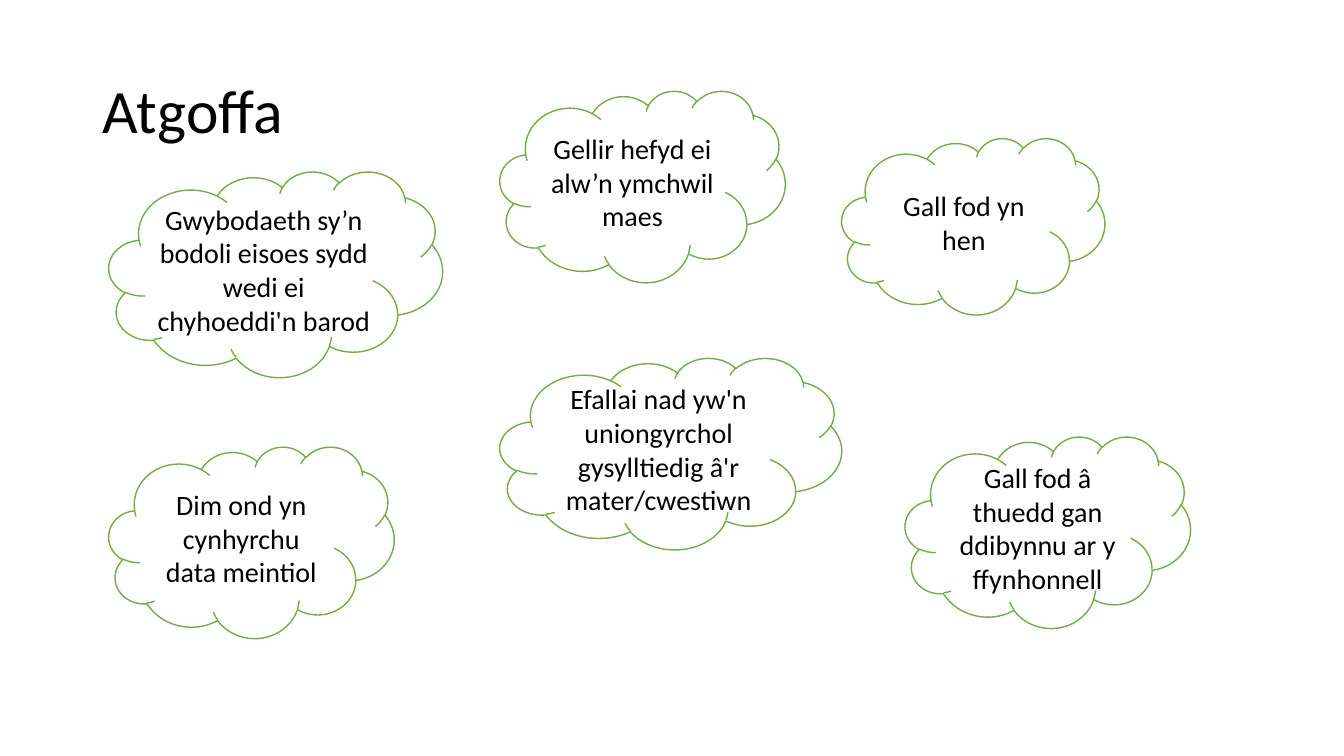
from pptx import Presentation
from pptx.dml.color import RGBColor
from pptx.enum.shapes import MSO_SHAPE
from pptx.enum.text import MSO_ANCHOR, MSO_AUTO_SIZE, PP_ALIGN
from pptx.util import Inches, Pt

COLOURS = {"text": "000000", "cloud": "FFFFFF", "outline": "70AD47"}
FONT = "Calibri"
SLIDE_WIDTH, SLIDE_HEIGHT = Inches(13.333), Inches(7.5)

TITLE_BOX = (6.9, 5.33, 86.25, 19.33)
LEFT, MIDDLE = 8.1, 37.2
USUAL_SIZE = (21.23, 25.33)
USUAL_MARGIN, NO_MARGIN = Inches(0.1), 0
CLOUDS = [
    ("Gwybodaeth sy’n bodoli eisoes sydd wedi ei chyhoeddi'n barod", (LEFT, 22.67, 24.83, 27.2), NO_MARGIN),
    ("Gellir hefyd ei alw’n ymchwil maes", (MIDDLE, 12, *USUAL_SIZE), USUAL_MARGIN),
    ("Gall fod yn hen", (62.63, 18.27, 19.58, 23.33), USUAL_MARGIN),
    ("Efallai nad yw'n uniongyrchol gysylltiedig â'r mater/cwestiwn", (MIDDLE, 47.33, 25.43, 25.33), USUAL_MARGIN),
    ("Gall fod â thuedd gan ddibynnu ar y ffynhonnell", (67.35, 57.73, *USUAL_SIZE), USUAL_MARGIN),
    ("Dim ond yn cynhyrchu data meintiol", (LEFT, 59.07, *USUAL_SIZE), USUAL_MARGIN),
]


def colour(name):
    """Return the named colour of the palette."""
    return RGBColor.from_string(COLOURS[name])


def place(box):
    """Turn a box in percent of the slide into left, top, width and height."""
    sides = (SLIDE_WIDTH, SLIDE_HEIGHT) * 2
    return [round(share * side / 100) for share, side in zip(box, sides)]


def write(shape, text, size, alignment, margin=USUAL_MARGIN):
    """Write one vertically centred paragraph into a shape."""
    frame = shape.text_frame
    frame.word_wrap = True
    frame.auto_size = MSO_AUTO_SIZE.NONE
    frame.vertical_anchor = MSO_ANCHOR.MIDDLE
    frame.margin_left = frame.margin_right = margin
    para = frame.paragraphs[0]
    para.text = text
    para.alignment = alignment
    para.font.name = FONT
    para.font.size = Pt(size)
    para.font.color.rgb = colour("text")
    return para


def add_title(page, text, box):
    """Move the title placeholder to its box and fill it."""
    title = page.shapes.title
    title.left, title.top, title.width, title.height = place(box)
    write(title, text, 44, PP_ALIGN.LEFT).line_spacing = 0.9


def add_cloud(page, text, box, margin):
    """Draw an outlined cloud with a centred statement."""
    cloud = page.shapes.add_shape(MSO_SHAPE.CLOUD, *place(box))
    cloud.shadow.inherit = False
    cloud.fill.solid()
    cloud.fill.fore_color.rgb = colour("cloud")
    cloud.line.color.rgb = colour("outline")
    cloud.line.width = Pt(1)
    write(cloud, text, 20, PP_ALIGN.CENTER, margin)


def main():
    """Build the reminder slide and save it."""
    deck = Presentation()
    deck.slide_width, deck.slide_height = SLIDE_WIDTH, SLIDE_HEIGHT
    page = deck.slides.add_slide(deck.slide_layouts[5])
    add_title(page, "Atgoffa", TITLE_BOX)
    for text, box, margin in CLOUDS:
        add_cloud(page, text, box, margin)
    deck.save("out.pptx")


if __name__ == "__main__":
    main()
